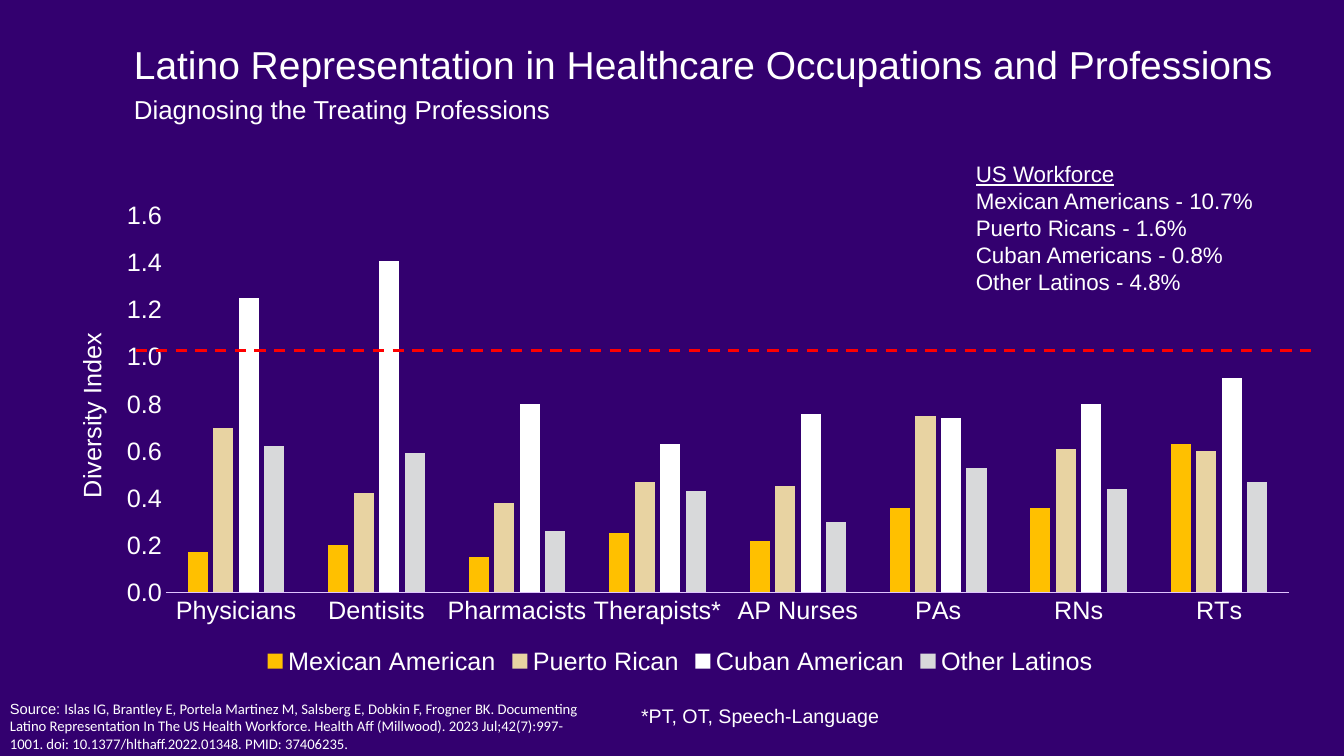
from dataclasses import dataclass

from lxml.etree import SubElement
from pptx import Presentation
from pptx.chart.data import CategoryChartData
from pptx.dml.color import RGBColor
from pptx.enum.chart import XL_CHART_TYPE, XL_LEGEND_POSITION, XL_TICK_MARK
from pptx.enum.dml import MSO_LINE
from pptx.enum.shapes import MSO_CONNECTOR
from pptx.enum.text import MSO_AUTO_SIZE
from pptx.oxml import parse_xml
from pptx.oxml.ns import nsdecls, qn
from pptx.util import Emu, Pt

PX = 9144  # EMU per px, 100 px to the inch


@dataclass(frozen=True)
class Theme:
    back: str = "33006F"
    ink: str = "FFFFFF"
    rule: str = "DFC3FF"
    mark: str = "FF0000"
    face: str = "Arial"
    cite: str = "Calibri"
    title: float = 27.8
    sub: float = 18.5
    chart: float = 18
    list: float = 16
    note: float = 14
    source: float = 10.5


@dataclass(frozen=True)
class Run:
    text: str
    size: float
    face: str = "Arial"
    line: bool = False


@dataclass(frozen=True)
class Box:
    left: int
    top: int
    width: int
    height: int
    paras: list[list[Run]]
    wrap: bool = True
    grow: bool = True
    head: bool = False


@dataclass(frozen=True)
class Group:
    name: str
    color: str
    values: list[float]


THEME = Theme()

JOBS = ["Physicians", "Dentisits", "Pharmacists", "Therapists*",
        "AP Nurses", "PAs", "RNs", "RTs"]
GROUPS = [
    Group("Mexican American", "FFC000",
          [0.17, 0.2, 0.15, 0.25, 0.22, 0.36, 0.36, 0.63]),
    Group("Puerto Rican", "E8D3A2",
          [0.7, 0.42, 0.38, 0.47, 0.45, 0.75, 0.61, 0.6]),
    Group("Cuban American", "FFFFFF",
          [1.25, 1.41, 0.8, 0.63, 0.76, 0.74, 0.8, 0.91]),
    Group("Other Latinos", "D8D9DA",
          [0.62, 0.59, 0.26, 0.43, 0.3, 0.53, 0.44, 0.47]),
]
SHARES = ["Mexican Americans - 10.7%", "Puerto Ricans - 1.6%",
          "Cuban Americans - 0.8%", "Other Latinos - 4.8%"]
CITE = ("Islas IG, Brantley E, Portela Martinez M, Salsberg E, Dobkin F, "
        "Frogner BK. Documenting Latino Representation In The US Health "
        "Workforce. Health Aff (Millwood). 2023 Jul;42(7):997-1001. "
        "doi: 10.1377/hlthaff.2022.01348. PMID: 37406235.")

BOXES = [
    Box(98, 41, 1193, 108, [
        [Run("Latino Representation in Healthcare Occupations and Professions",
             THEME.title)],
        [Run("Diagnosing the Treating Professions", THEME.sub)],
    ], grow=False, head=True),
    Box(626, 693, 257, 34,
        [[Run("*PT, OT, Speech-Language", THEME.note)]], wrap=False),
    Box(0, 689, 595, 63, [[Run("Source: ", THEME.source),
                           Run(CITE, THEME.source, THEME.cite)]]),
    Box(958, 154, 305, 148,
        [[Run("US Workforce", THEME.list, line=True)],
         *([Run(share, THEME.list)] for share in SHARES)], wrap=False),
]


def px(*sizes: int) -> list[Emu]:
    return [Emu(size * PX) for size in sizes]


def rgb(color: str) -> RGBColor:
    return RGBColor.from_string(color)


def style(item, **values) -> None:
    for name, value in values.items():
        setattr(item, name, value)


def ink(font, size: float, face: str = THEME.face, **more) -> None:
    style(font, size=Pt(size), name=face, **more)
    font.color.rgb = rgb(THEME.ink)


def add_box(slide, box: Box) -> None:
    shape = slide.shapes.add_textbox(
        *px(box.left, box.top, box.width, box.height))
    frame = shape.text_frame
    style(frame, word_wrap=box.wrap,
          auto_size=MSO_AUTO_SIZE.SHAPE_TO_FIT_TEXT if box.grow
          else MSO_AUTO_SIZE.NONE)
    for index, runs in enumerate(box.paras):
        para = frame.add_paragraph() if index else frame.paragraphs[0]
        if box.head:
            style(para, line_spacing=0.9, space_before=Pt(6 if index else 0))
            props = para._p.get_or_add_pPr()
            for key, size in {"marL": 50, "indent": -25}.items():
                props.set(key, str(size * PX))
        for item in runs:
            run = para.add_run()
            run.text = item.text
            ink(run.font, item.size, item.face, underline=item.line)


def place(parent, index: int, **spots: float) -> None:
    """Pin a chart part at fractions of the chart area."""
    for old in parent.findall(qn("c:layout")):
        parent.remove(old)
    modes = '<c:xMode val="edge"/><c:yMode val="edge"/>'
    inner = '<c:layoutTarget val="inner"/>' if "w" in spots else ""
    parts = "".join(f'<c:{key} val="{val}"/>' for key, val in spots.items())
    parent.insert(index, parse_xml(
        f'<c:layout {nsdecls("c")}><c:manualLayout>{inner}{modes}{parts}'
        "</c:manualLayout></c:layout>"))


def add_bars(slide) -> None:
    data = CategoryChartData(number_format="0.00")
    data.categories = JOBS
    for group in GROUPS:
        data.add_series(group.name, group.values)
    chart = slide.shapes.add_chart(XL_CHART_TYPE.COLUMN_CLUSTERED,
                                   *px(45, 190, 1259, 485), data).chart
    style(chart, has_title=False, has_legend=True)
    style(chart.legend, position=XL_LEGEND_POSITION.BOTTOM,
          include_in_layout=False)
    for part in (chart, chart.legend):
        ink(part.font, THEME.chart)

    plot = chart.plots[0]
    style(plot, gap_width=219, overlap=-27, vary_by_categories=False)
    for series, group in zip(plot.series, GROUPS):
        series.format.fill.solid()
        series.format.fill.fore_color.rgb = rgb(group.color)

    base, scale = chart.category_axis, chart.value_axis
    for axis in (base, scale):
        style(axis, major_tick_mark=XL_TICK_MARK.NONE,
              minor_tick_mark=XL_TICK_MARK.NONE, has_major_gridlines=False)
        ink(axis.tick_labels.font, THEME.chart)
    base.format.line.color.rgb = rgb(THEME.rule)
    base.format.line.width = Pt(0.75)
    style(scale, minimum_scale=0, maximum_scale=1.6, major_unit=0.2)
    style(scale.tick_labels, number_format="0.0",
          number_format_is_linked=False)
    scale.format.line.fill.background()

    title = scale.axis_title
    frame = title.text_frame
    frame.text = "Diversity Index"
    ink(frame.paragraphs[0].runs[0].font, THEME.chart, bold=False)
    body = frame._txBody.find(qn("a:bodyPr"))
    for key, value in {"rot": "-5400000", "vert": "horz"}.items():
        body.set(key, value)
    place(title._element, 1, x=0.02, y=0.28)
    place(chart._chartSpace.chart.plotArea, 0, x=0.095, y=0.05, w=0.885, h=0.77)


def add_par(slide) -> None:
    """Draw the dashed line of equal representation."""
    line = slide.shapes.add_connector(MSO_CONNECTOR.STRAIGHT,
                                      *px(135, 348, 1304, 348))
    style(line.line, width=Pt(2), dash_style=MSO_LINE.DASH)
    line.line.color.rgb = rgb(THEME.mark)
    SubElement(line._element.spPr, qn("a:effectLst"))


def main() -> None:
    deck = Presentation()
    wide, high = px(1333, 750)
    style(deck, slide_width=wide, slide_height=high)
    slide = deck.slides.add_slide(deck.slide_layouts[6])
    slide.background.fill.solid()
    slide.background.fill.fore_color.rgb = rgb(THEME.back)
    add_bars(slide)
    add_par(slide)
    for box in BOXES:
        add_box(slide, box)
    deck.save("out.pptx")


if __name__ == "__main__":
    main()
